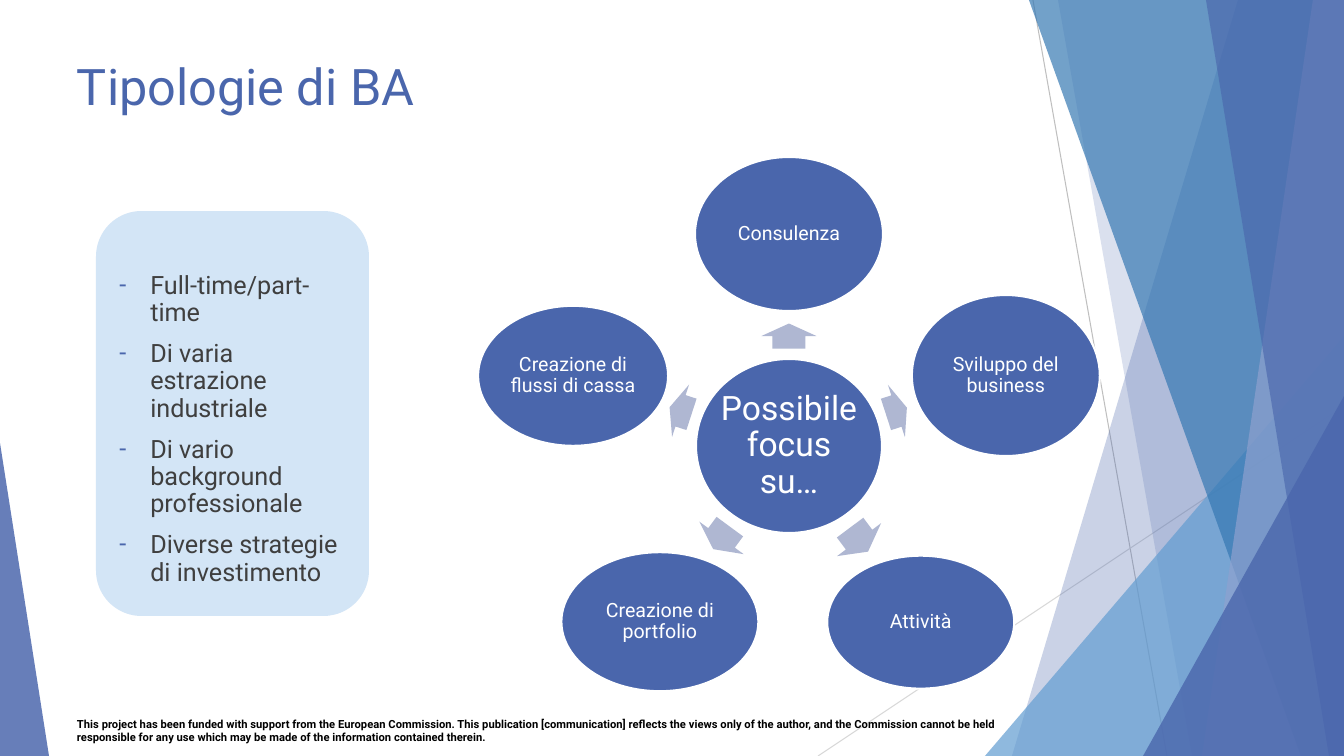
"""Builds the slide on types of BA with a five-part focus diagram."""
from math import cos, radians, sin

from lxml import etree
from pptx import Presentation
from pptx.dml.color import RGBColor
from pptx.enum.shapes import MSO_CONNECTOR, MSO_SHAPE
from pptx.enum.text import MSO_ANCHOR, MSO_AUTO_SIZE, PP_ALIGN
from pptx.oxml.ns import qn
from pptx.util import Pt

STRAIGHT = MSO_CONNECTOR.STRAIGHT
OVAL, ARROW, TRIANGLE = MSO_SHAPE.OVAL, MSO_SHAPE.RIGHT_ARROW, MSO_SHAPE.ISOSCELES_TRIANGLE
TOP, MIDDLE = MSO_ANCHOR.TOP, MSO_ANCHOR.MIDDLE
LEFT, CENTER = PP_ALIGN.LEFT, PP_ALIGN.CENTER
NO_FIT = MSO_AUTO_SIZE.NONE

WIDTH, HEIGHT = 1344, 756
EMU_PER_PX = 914400 / 100.8
FONT = "Roboto"
BLUE, WHITE, ARROW_GREY = "4A66AC", "FFFFFF", "AFB7D2"

TITLE = "Tipologie di BA"
TRAITS = [
    "Full-time/part-time",
    "Di varia estrazione industriale",
    "Di vario background professionale",
    "Diverse strategie di investimento",
]
FOOTER = (
    "This project has been funded with support from the European Commission. "
    "This publication [communication] reflects the views only of the author, and the "
    "Commission cannot be held responsible for any use which may be made of the "
    "information contained therein."
)
HUB_TEXT = "Possibile focus su…"
HUB_X, HUB_Y, HUB_WIDTH, HUB_HEIGHT = 789, 446, 186, 174
ARROW_SPAN = 55
# text, angle, distance, width, height, arrow distance, arrow length
FOCUSES = [
    ("Consulenza", 270, 212, 188, 154, 110, 25),
    ("Sviluppo del business", 342, 228, 188, 161, 113, 22),
    ("Attività", 53.2, 220, 187, 133, 117, 30),
    ("Creazione di portfolio", 126.3, 218, 197, 139, 114, 28),
    ("Creazione di flussi di cassa", 198, 227, 190, 140, 114, 23),
]
HAIRLINES = [
    ((1033, 0, 1167, HEIGHT), "BFBFBF"),
    ((WIDTH, 406, 818, HEIGHT), "D8D8D8"),
]
# facets: top x, bottom x; triangles: left, top, width, apex
DECORATION = [
    ((1238, 1012), BLUE, 29),
    ((1058, 1192), BLUE, 20),
    ((985, 336, 359, 1), "629DD1", 71),
    ((1029, 1301), "3477B2", 69),
    ((1313, 1202), "8FA1CF", 69),
    ((1206, 1329), BLUE, 64),
    ((1143, 396, 201, 1), BLUE, 80),
    ((0, 443, 49, 0), BLUE, 84),
]


def px(*values):
    return [round(value * EMU_PER_PX) for value in values]


def color(value):
    return RGBColor.from_string(value)


def paint(shape, fill, alpha=100, outline=None):
    shape.shadow.inherit = False
    shape.fill.solid()
    shape.fill.fore_color.rgb = color(fill)
    if alpha < 100:
        tint = shape.fill._xPr.find(qn("a:solidFill"))[0]
        etree.SubElement(tint, qn("a:alpha")).set("val", str(alpha * 1000))
    if outline:
        shape.line.color.rgb = color(outline)
        shape.line.width = Pt(1.5)
    else:
        shape.line.fill.background()


def write(shape, lines, size, ink, align=LEFT, anchor=TOP, inset=(10, 5),
          spacing=1.0, bold=False):
    frame = shape.text_frame
    frame.word_wrap = True
    frame.auto_size = NO_FIT
    frame.vertical_anchor = anchor
    frame.margin_left = frame.margin_right = px(inset[0])[0]
    frame.margin_top = frame.margin_bottom = px(inset[1])[0]
    frame.text = "\n".join(lines)
    for para in frame.paragraphs:
        para.alignment = align
        para.line_spacing = spacing
        para.space_before = Pt(0)
        for span in para.runs:
            span.font.name = FONT
            span.font.size = Pt(size)
            span.font.bold = bold
            span.font.color.rgb = color(ink)


def place(shape, left, top, width, height):
    shape.left, shape.top, shape.width, shape.height = px(left, top, width, height)


def add_bullet(para):
    props = para._p.get_or_add_pPr()
    indent = px(31)[0]
    props.set("marL", str(indent))
    props.set("indent", str(-indent))
    tint = etree.SubElement(props, qn("a:buClr"))
    etree.SubElement(tint, qn("a:srgbClr")).set("val", BLUE)
    etree.SubElement(props, qn("a:buFont")).set("typeface", FONT)
    etree.SubElement(props, qn("a:buChar")).set("char", "-")


def add_decoration(shapes):
    for ends, tint in HAIRLINES:
        line = shapes.add_connector(STRAIGHT, *px(*ends))
        line.line.color.rgb = color(tint)
        line.line.width = Pt(0.75)
        etree.SubElement(line._element.spPr, qn("a:effectLst"))
    for geometry, tint, alpha in DECORATION:
        if len(geometry) == 2:
            top_x, bottom_x = geometry
            builder = shapes.build_freeform(*px(top_x, 0))
            corners = [(WIDTH, 0), (WIDTH, HEIGHT), (bottom_x, HEIGHT)]
            builder.add_line_segments([px(*corner) for corner in corners])
            shape = builder.convert_to_shape()
        else:
            left, top, width, apex = geometry
            shape = shapes.add_shape(TRIANGLE, *px(left, top, width, HEIGHT - top))
            shape.adjustments[0] = apex
        paint(shape, tint, alpha)


def add_centered(shapes, kind, x, y, width, height, fill, outline=None):
    shape = shapes.add_shape(kind, *px(x - width / 2, y - height / 2, width, height))
    paint(shape, fill, outline=outline)
    return shape


def add_traits(body):
    place(body, 96, 211, 273, 405)
    body.fill.solid()
    body.fill.fore_color.rgb = color("D3E5F6")
    outline = etree.Element(qn("a:prstGeom"), prst="flowChartAlternateProcess")
    etree.SubElement(outline, qn("a:avLst"))
    body._element.spPr.find(qn("a:xfrm")).addnext(outline)
    write(body, TRAITS, 18, "3F3F3F", spacing=0.9)
    body.text_frame.margin_top = px(48)[0]
    for index, para in enumerate(body.text_frame.paragraphs):
        add_bullet(para)
        para.space_before = Pt(10 if index else 0)


def add_focus_diagram(shapes):
    add_centered(shapes, OVAL, HUB_X, HUB_Y, HUB_WIDTH, HUB_HEIGHT, BLUE, WHITE)
    label = shapes.add_textbox(*px(HUB_X - 73, HUB_Y - 61, 146, 122))
    write(label, [HUB_TEXT], 24, WHITE, CENTER, MIDDLE, (3, 3), 0.9)
    for text, angle, distance, width, height, arrow_distance, length in FOCUSES:
        across, down = cos(radians(angle)), sin(radians(angle))
        arrow = add_centered(shapes, ARROW, HUB_X + arrow_distance * across,
                             HUB_Y + arrow_distance * down, length, ARROW_SPAN, ARROW_GREY)
        arrow.adjustments[0] = 0.6
        arrow.adjustments[1] = 0.5
        arrow.rotation = angle
        focus = add_centered(shapes, OVAL, HUB_X + distance * across,
                             HUB_Y + distance * down, width, height, BLUE, WHITE)
        write(focus, [text], 14, WHITE, CENTER, MIDDLE, (2, 2), 0.9)


def main():
    deck = Presentation()
    deck.slide_width, deck.slide_height = px(WIDTH, HEIGHT)
    page = deck.slides.add_slide(deck.slide_layouts[1])
    add_decoration(page.shapes)
    footer = page.shapes.add_textbox(*px(67, 712, 954, 37))
    write(footer, [FOOTER], 8, "000000", bold=True)
    title, body = page.placeholders
    place(title, 67, 50, 1210, 151)
    write(title, [TITLE], 36, BLUE)
    add_traits(body)
    add_focus_diagram(page.shapes)
    deck.save("out.pptx")


if __name__ == "__main__":
    main()
